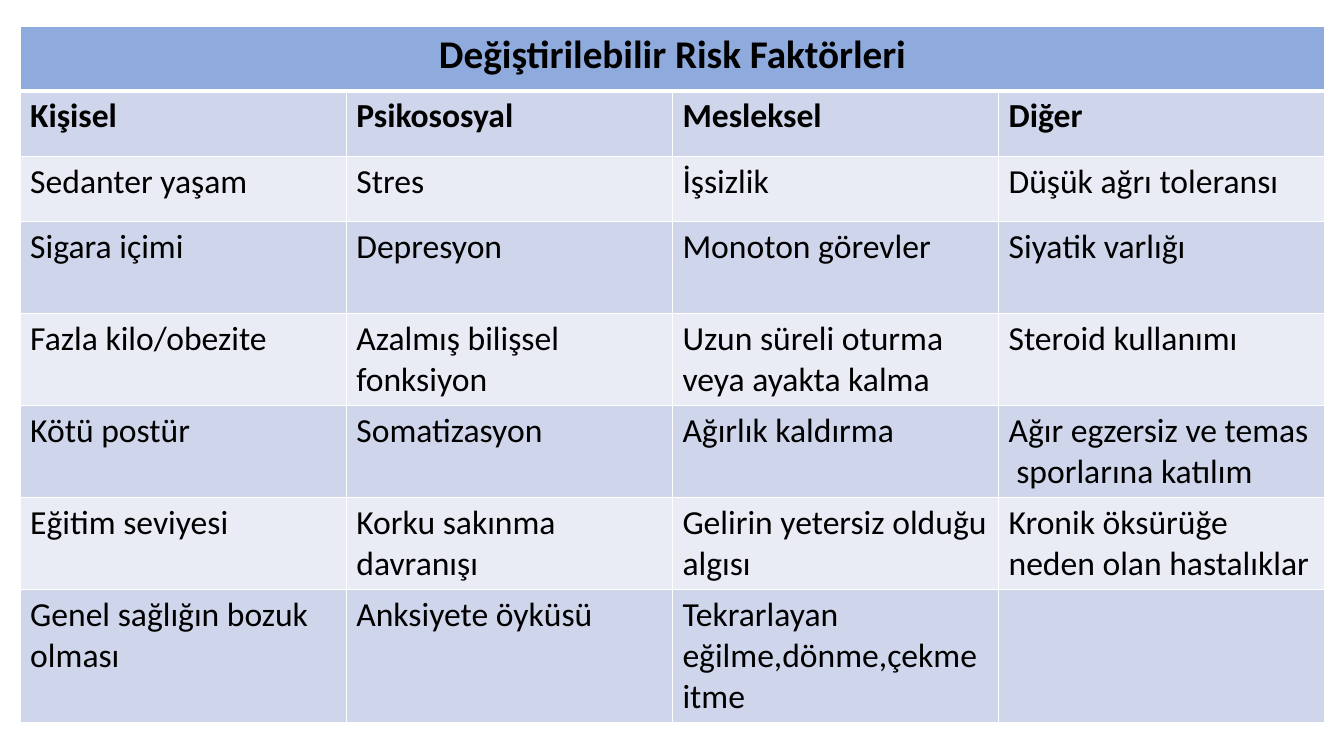
from dataclasses import dataclass

from lxml.etree import SubElement
from pptx import Presentation
from pptx.dml.color import RGBColor as Color
from pptx.enum.text import PP_ALIGN as Align
from pptx.oxml.ns import qn
from pptx.util import Inches, Pt


@dataclass(frozen=True)
class Theme:
    """Colours, font and type sizes of the slide."""
    font: str = "Calibri"
    ink: str = "000000"
    title_fill: str = "8FAADC"
    bands: tuple = ("CFD5EA", "E9EBF5")
    border: str = "FFFFFF"
    title_size: int = 28
    body_size: int = 24
    thin: int = 1
    thick: int = 3


THEME = Theme()
TITLE = "Değiştirilebilir Risk Faktörleri"
HEADINGS = ("Kişisel", "Psikososyal", "Mesleksel", "Diğer")
FACTORS = (
    ("Sedanter yaşam", "Stres", "İşsizlik", "Düşük ağrı toleransı"),
    ("Sigara içimi", "Depresyon", "Monoton görevler", "Siyatik varlığı"),
    ("Fazla kilo/obezite", "Azalmış bilişsel fonksiyon",
     "Uzun süreli oturma veya ayakta kalma", "Steroid kullanımı"),
    ("Kötü postür", "Somatizasyon", "Ağırlık kaldırma",
     "Ağır egzersiz ve temas  sporlarına katılım"),
    ("Eğitim seviyesi", "Korku sakınma davranışı",
     "Gelirin yetersiz olduğu algısı", "Kronik öksürüğe neden olan hastalıklar"),
    ("Genel sağlığın bozuk olması", "Anksiyete öyküsü",
     "Tekrarlayan eğilme,dönme,çekme itme", ""),
)
ROW_HEIGHTS = (0.64, 0.65, 0.65, 0.91, 0.91, 0.91, 0.91, 1.32)


def set_borders(cell, top, bottom):
    """Draw the cell's four borders, with the given top and bottom widths."""
    properties = cell._tc.get_or_add_tcPr()
    sides = (("L", THEME.thin), ("R", THEME.thin), ("T", top), ("B", bottom))
    for position, (side, width) in enumerate(sides):
        line = properties.makeelement(qn(f"a:ln{side}"), {"w": str(Pt(width))})
        fill = SubElement(line, qn("a:solidFill"))
        SubElement(fill, qn("a:srgbClr"), val=THEME.border)
        properties.insert(position, line)


def fill_cell(cell, text, fill, size, bold=False, align=Align.LEFT):
    """Colour a cell and write its text."""
    cell.fill.solid()
    cell.fill.fore_color.rgb = Color.from_string(fill)
    para = cell.text_frame.paragraphs[0]
    para.alignment = align
    if text:
        span = para.add_run()
        span.text = text
        span.font.name = THEME.font
        span.font.size = Pt(size)
        span.font.bold = bold
        span.font.color.rgb = Color.from_string(THEME.ink)


def add_risk_table(page, left, top, width):
    """Place the risk factor table at a corner, with equal columns."""
    rows = (HEADINGS, *FACTORS)
    frame = page.shapes.add_table(
        len(ROW_HEIGHTS), len(HEADINGS), Inches(left), Inches(top),
        Inches(width), Inches(sum(ROW_HEIGHTS)))
    table = frame.table
    for row, height in zip(table.rows, ROW_HEIGHTS):
        row.height = Inches(height)
    for column in table.columns:
        column.width = Inches(width / len(HEADINGS))

    table.cell(0, 0).merge(table.cell(0, len(HEADINGS) - 1))
    fill_cell(table.cell(0, 0), TITLE, THEME.title_fill, THEME.title_size,
              bold=True, align=Align.CENTER)
    for column in range(len(HEADINGS)):
        set_borders(table.cell(0, column), THEME.thin, THEME.thick)

    for number, texts in enumerate(rows):
        for column, text in enumerate(texts):
            cell = table.cell(number + 1, column)
            fill_cell(cell, text, THEME.bands[number % 2], THEME.body_size,
                      bold=number == 0)
            set_borders(cell, THEME.thin if number else THEME.thick, THEME.thin)


def main():
    """Build the deck and save it."""
    deck = Presentation()
    deck.slide_width = Inches(13.33)
    deck.slide_height = Inches(7.5)
    page = deck.slides.add_slide(deck.slide_layouts[6])
    add_risk_table(page, 0.2, 0.26, 12.94)
    deck.save("out.pptx")


if __name__ == "__main__":
    main()
